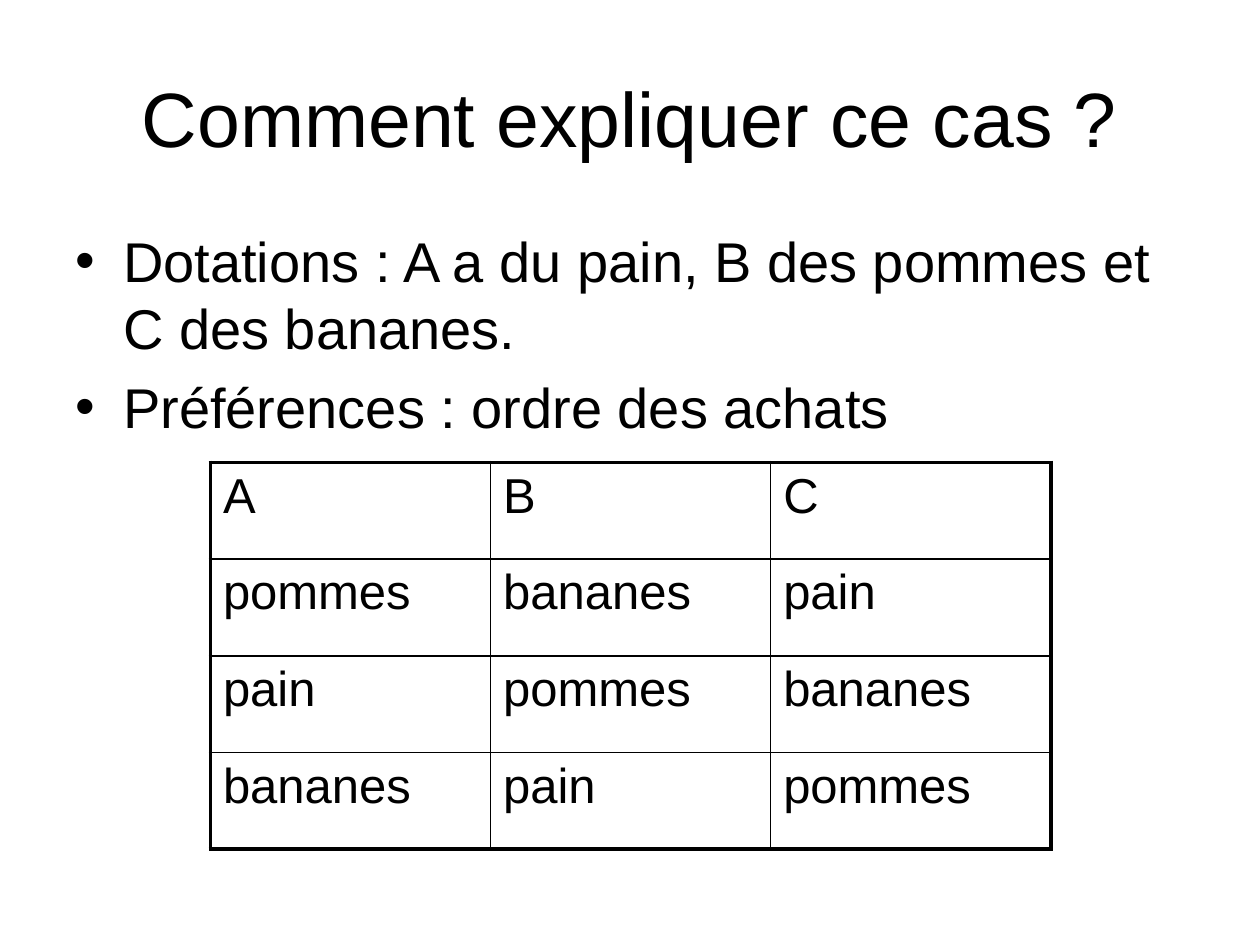
"""Build a slide on endowments and preferences, with a table of purchase orders."""
from lxml import etree
from pptx import Presentation
from pptx import util as u
from pptx.dml.color import RGBColor
from pptx.enum import text
from pptx.oxml import ns

COLORS = {"ink": "000000", "paper": "FFFFFF"}
FONT = "Arial"
POINTS = [
    "Dotations : A a du pain, B des pommes et C des bananes.",
    "Préférences : ordre des achats",
]
PURCHASES = [
    ["A", "B", "C"],
    ["pommes", "bananes", "pain"],
    ["pain", "pommes", "bananes"],
    ["bananes", "pain", "pommes"],
]


def style_font(para, size):
    para.font.name = FONT
    para.font.size = u.Pt(size)
    para.font.color.rgb = RGBColor.from_string(COLORS["ink"])


def add_text_frame(slide, left, top, width, height, anchor):
    frame = slide.shapes.add_textbox(*map(u.Inches, (left, top, width, height))).text_frame
    frame.word_wrap = True
    frame.vertical_anchor = anchor
    return frame


def add_title(slide, title):
    frame = add_text_frame(slide, 0.5, 0.3, 9, 1.25, text.MSO_ANCHOR.MIDDLE)
    para = frame.paragraphs[0]
    para.text = title
    para.alignment = text.PP_ALIGN.CENTER
    style_font(para, 44)


def add_bullets(slide, points):
    frame = add_text_frame(slide, 0.5, 1.75, 9, 4.95, text.MSO_ANCHOR.TOP)
    for index, point in enumerate(points):
        para = frame.paragraphs[0] if index == 0 else frame.add_paragraph()
        para.text = point
        para.space_before = u.Pt(6.4)
        style_font(para, 32)
        props = para._p.get_or_add_pPr()
        props.set("marL", str(u.Inches(0.38)))
        props.set("indent", str(-u.Inches(0.38)))
        etree.SubElement(props, ns.qn("a:buFont"), typeface=FONT)
        bullet = etree.SubElement(props, ns.qn("a:buChar"), char="•")
        default_font = props.find(ns.qn("a:defRPr"))
        if default_font is not None:
            bullet.addnext(default_font)


def set_borders(cell, widths):
    props = cell._tc.get_or_add_tcPr()
    for index, (side, width) in enumerate(widths.items()):
        line = etree.Element(ns.qn(f"a:ln{side}"), w=str(u.Pt(width)))
        fill = etree.SubElement(line, ns.qn("a:solidFill"))
        etree.SubElement(fill, ns.qn("a:srgbClr"), val=COLORS["ink"])
        props.insert(index, line)


def add_purchase_table(slide, rows):
    row_count, column_count = len(rows), len(rows[0])
    area = map(u.Inches, (1.67, 3.67, 6.67, 3.07))
    table = slide.shapes.add_table(row_count, column_count, *area).table
    table.first_row = table.horz_banding = False
    for r, row in enumerate(rows):
        for c, label in enumerate(row):
            cell = table.cell(r, c)
            cell.text = label
            para = cell.text_frame.paragraphs[0]
            para.space_before = u.Pt(5.6)
            style_font(para, 28)
            cell.fill.background()
            outer = {"L": c == 0, "R": c == column_count - 1,
                     "T": r == 0, "B": r == row_count - 1}
            set_borders(cell, {side: 2.25 if edge else 1 for side, edge in outer.items()})


def main():
    deck = Presentation()
    deck.slide_width, deck.slide_height = u.Inches(10), u.Inches(7.5)
    slide = deck.slides.add_slide(deck.slide_layouts[6])
    background = slide.background.fill
    background.solid()
    background.fore_color.rgb = RGBColor.from_string(COLORS["paper"])
    add_title(slide, "Comment expliquer ce cas ?")
    add_bullets(slide, POINTS)
    add_purchase_table(slide, PURCHASES)
    deck.save("out.pptx")


if __name__ == "__main__":
    main()
